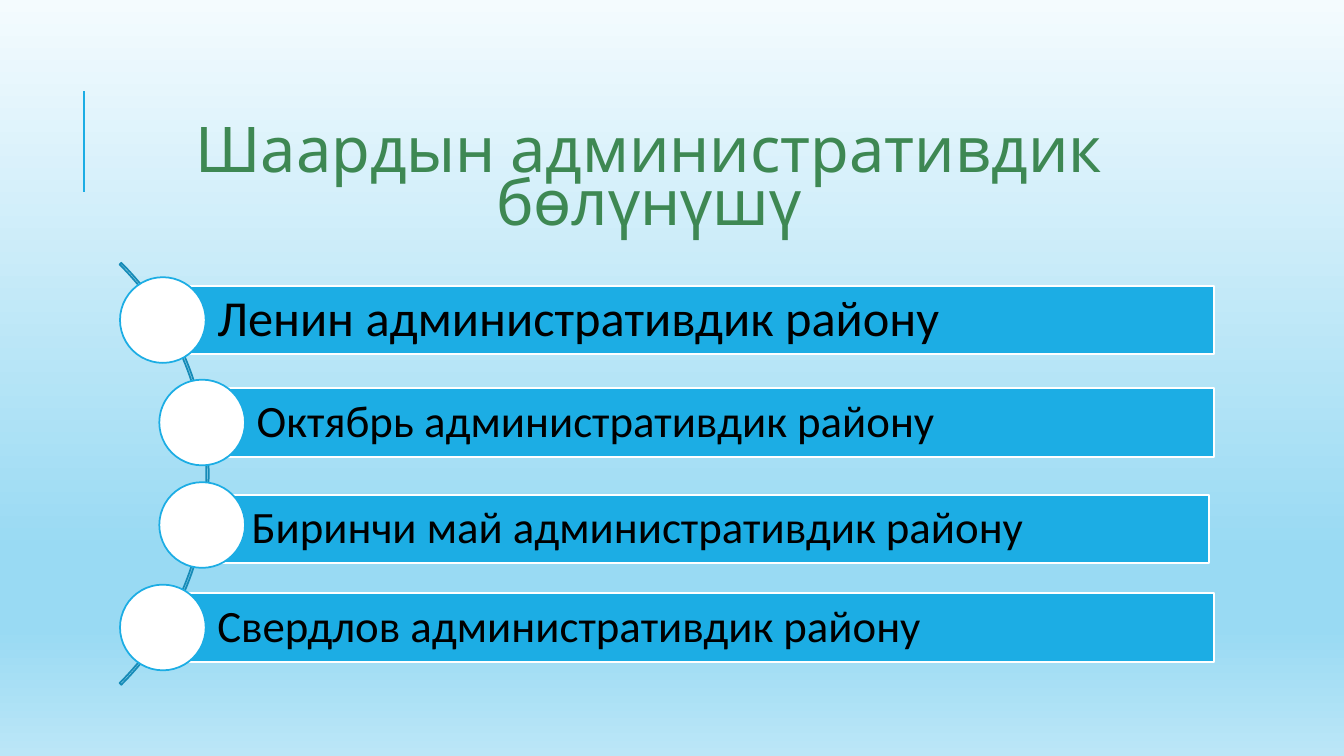
from lxml import etree
from pptx import Presentation
from pptx.dml.color import RGBColor
from pptx.enum.shapes import MSO_CONNECTOR, MSO_SHAPE
from pptx.enum.text import MSO_ANCHOR, MSO_AUTO_SIZE, PP_ALIGN
from pptx.oxml.ns import qn
from pptx.util import Inches, Pt

BLUE, WHITE = "1CADE4", "FFFFFF"
SKY = [(0, "F4FBFE"), (73, "99DAF3"), (83, "99DAF3"), (100, "BBE6F7")]
# District, text size, circle indent, bar nudge right and down
DISTRICTS = [
    ("Ленин административдик району", 36, 0, (0, 0)),
    ("Октябрь административдик району", 32, 0.39, (0, 0)),
    ("Биринчи май административдик району", 32, 0.39, (-0.05, 0.04)),
    ("Свердлов административдик району", 32, 0, (0, 0)),
]


def rgb(value):
    return RGBColor.from_string(value)


def paint_background(slide):
    fill = slide.background.fill
    fill.gradient()
    fill.gradient_angle = 270
    stops = slide.element.find(".//" + qn("a:gsLst"))
    for stop in list(stops):
        stops.remove(stop)
    for position, colour in SKY:
        stop = etree.SubElement(stops, qn("a:gs"), pos=str(position * 1000))
        etree.SubElement(stop, qn("a:srgbClr"), val=colour)


def add_outlined(slide, kind, left, top, width, height, fill, line):
    shape = slide.shapes.add_shape(
        kind, Inches(left), Inches(top), Inches(width), Inches(height))
    shape.shadow.inherit = False
    if fill:
        shape.fill.solid()
        shape.fill.fore_color.rgb = rgb(fill)
    else:
        shape.fill.background()
    shape.line.color.rgb = rgb(line)
    shape.line.width = Pt(1.25)
    return shape


def add_accent_line(slide, x, top, height):
    accent = slide.shapes.add_connector(
        MSO_CONNECTOR.STRAIGHT, Inches(x), Inches(top + height), Inches(x), Inches(top))
    accent.line.color.rgb = rgb(BLUE)
    accent.line.width = Pt(1.5)
    etree.SubElement(accent.element.spPr, qn("a:effectLst"))


def add_heading(slide, left, top, width, height):
    heading = slide.shapes.title
    heading.left, heading.top = Inches(left), Inches(top)
    heading.width, heading.height = Inches(width), Inches(height)
    frame = heading.text_frame
    frame.text = "Шаардын административдик бөлүнүшү"
    frame.word_wrap = True
    frame.auto_size = MSO_AUTO_SIZE.NONE
    frame.vertical_anchor = MSO_ANCHOR.MIDDLE
    paragraph = frame.paragraphs[0]
    paragraph.alignment = PP_ALIGN.CENTER
    paragraph.line_spacing = 0.7
    paragraph.font.name = "Cabin"
    paragraph.font.size = Pt(45)
    paragraph.font.color.rgb = rgb("3E8853")


def add_district_bar(slide, left, top, width, height, district, size):
    bar = add_outlined(slide, MSO_SHAPE.RECTANGLE, left, top, width, height, BLUE, WHITE)
    frame = bar.text_frame
    frame.text = district
    frame.word_wrap = True
    frame.vertical_anchor = MSO_ANCHOR.MIDDLE
    frame.margin_left = Inches(0.54)
    frame.margin_top = frame.margin_right = frame.margin_bottom = Inches(0.09)
    paragraph = frame.paragraphs[0]
    paragraph.alignment = PP_ALIGN.LEFT
    paragraph.line_spacing = 0.9
    paragraph.font.name = "Calibri"
    paragraph.font.size = Pt(size)
    paragraph.font.color.rgb = rgb("000000")


def add_district_list(slide, left, top, width, height):
    """Curve of circles, each with a bar running to the right edge of the box."""
    circle, bar_height = 0.85, 0.68
    arc_size = 5.92
    arc = add_outlined(slide, MSO_SHAPE.BLOCK_ARC, left - 5.04,
                       top + (height - arc_size) / 2, arc_size, arc_size, None, "168BB7")
    for index, value in enumerate((189, 27, 0.004)):
        arc.adjustments[index] = value

    pitch = (height - circle) / (len(DISTRICTS) - 1)
    for row, (district, size, indent, (right, down)) in enumerate(DISTRICTS):
        circle_left, circle_top = left + indent, top + row * pitch
        bar_left = circle_left + circle / 2
        add_district_bar(slide, bar_left + right,
                         circle_top + (circle - bar_height) / 2 + down,
                         left + width - bar_left, bar_height, district, size)
        add_outlined(slide, MSO_SHAPE.OVAL, circle_left, circle_top,
                     circle, circle, WHITE, BLUE)


def main():
    deck = Presentation()
    deck.slide_width, deck.slide_height = Inches(13.33), Inches(7.5)
    slide = deck.slides.add_slide(deck.slide_layouts[5])
    paint_background(slide)
    add_accent_line(slide, 0.83, 0.9, 1)
    add_heading(slide, 1.12, 1, 10.63, 1.64)
    add_district_list(slide, 1.19, 2.75, 10.85, 3.9)
    deck.save("out.pptx")


if __name__ == "__main__":
    main()
